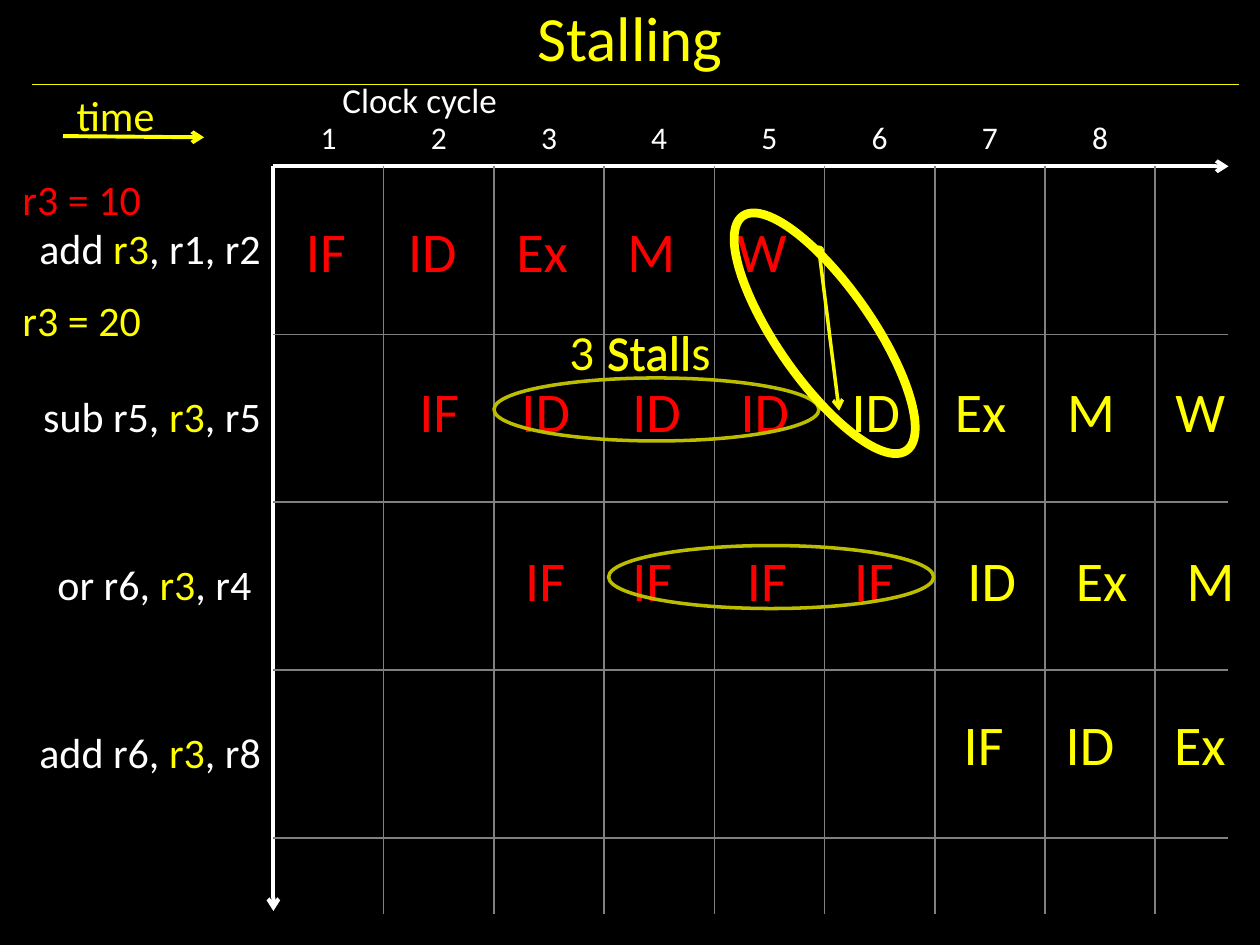
from pptx import Presentation
from pptx.dml.color import RGBColor
from pptx.enum.shapes import MSO_CONNECTOR, MSO_SHAPE
from pptx.enum.text import MSO_ANCHOR, MSO_AUTO_SIZE, PP_ALIGN
from pptx.oxml import parse_xml
from pptx.oxml.ns import nsdecls
from pptx.util import Inches, Pt

LINE, OVAL = MSO_CONNECTOR.STRAIGHT, MSO_SHAPE.OVAL
MID, GROW = MSO_ANCHOR.MIDDLE, MSO_AUTO_SIZE.SHAPE_TO_FIT_TEXT
LEFT, MIDDLE, RIGHT = PP_ALIGN.LEFT, PP_ALIGN.CENTER, PP_ALIGN.RIGHT
FONT = "Calibri"
WHITE, YELLOW, RED, GRAY = "FFFFFF", "FFFF00", "FF0000", "808080"
GOLD, OLIVE = "F9F900", "BDBD00"
PLAIN = "{2D5ABB26-0587-4C30-8999-92F81FD0307C}"

CODE = [("add ", ", r1, r2"), ("sub r5, ", ", r5"),
        ("or r6, ", ", r4 "), ("add r6, ", ", r8")]
CYCLES = 8
COLS = [2] + [7 / 8] * CYCLES + [0.58]
ROWS = [0.42] + [4 / 3] * 4 + [0.6]

WIDTHS = {"IF": 0.52, "ID": 0.59, "Ex": 0.62, "M": 0.59, "W": 0.6}
STAGES = [
    (1.67, RED, [("IF", 2.33), ("ID", 3.14), ("Ex", 4), ("M", 4.88), ("W", 5.75)]),
    (2.94, RED, [("IF", 3.23), ("ID", 4.04), ("ID", 4.92), ("ID", 5.78)]),
    (2.94, YELLOW, [("ID", 6.66), ("Ex", 7.48), ("M", 8.37), ("W", 9.23)]),
    (4.28, RED, [("IF", 4.07), ("IF", 4.92), ("IF", 5.83), ("IF", 6.68)]),
    (4.28, YELLOW, [("ID", 7.58), ("Ex", 8.44), ("M", 9.32)]),
    (5.58, YELLOW, [("IF", 7.55), ("ID", 8.36), ("Ex", 9.22)]),
]
LABELS = [
    ("Clock cycle", 2.62, 0.57, 1.63, 0.44, 20, WHITE),
    ("r3 = 10", 0.08, 1.33, 1.15, 0.5, 24, RED),
    ("r3 = 20", 0.08, 2.29, 1.15, 0.5, 24, YELLOW),
    ("time", 0.51, 0.66, 0.83, 0.5, 24, YELLOW),
]
STALLS = [
    ("Stalls", 4.72, 2.5, 1.03, 0.57, 28, YELLOW),
    ("3", 4.42, 2.5, 0.4, 0.57, 28, YELLOW),
    ("Stall", 4.72, 2.51, 0.88, 0.57, 28, YELLOW),
]
AXES = [
    (0.25, 0.67, 9.83, 0.67, GOLD, 0.75, None, None),
    (2.17, 1.32, 9.75, 1.32, WHITE, 2.25, None, "arrow"),
    (2.17, 1.32, 2.17, 7.23, WHITE, 2.25, None, "arrow"),
]
TIME = (0.5, 1.08, 1.62, 1.09, YELLOW, 2.25, None, "arrow")
PASS = (6.5, 1.99, 6.66, 3.26, GOLD, 2, "oval", "arrow")
RINGS = [
    (3.92, 3, 2.58, 0.5, 0, OLIVE, 2),
    (4.83, 4.33, 2.58, 0.5, 0, OLIVE, 2),
    (6.17, 1.51, 0.75, 2.27, 325.1, YELLOW, 5),
]


def color(text):
    return RGBColor.from_string(text)


def style(font, size, tint):
    font.name, font.size = FONT, Pt(size)
    font.color.rgb = color(tint)


def label(text, x, y, w, h, size, tint):
    box = slide.shapes.add_textbox(*map(Inches, (x, y, w, h)))
    frame = box.text_frame
    frame.word_wrap, frame.auto_size = False, GROW
    frame.text = text
    style(frame.paragraphs[0].font, size, tint)
    return frame


def line(x, y, x2, y2, tint, width, head, tail):
    link = slide.shapes.add_connector(LINE, *map(Inches, (x, y, x2, y2)))
    link.line.color.rgb, link.line.width = color(tint), Pt(width)
    for tag, kind in (("headEnd", head), ("tailEnd", tail)):
        if kind:
            link.line._ln.append(parse_xml(f'<a:{tag} {nsdecls("a")} type="{kind}"/>'))
    link._element.spPr.append(parse_xml(f'<a:effectLst {nsdecls("a")}/>'))


def ring(x, y, w, h, turn, tint, width):
    oval = slide.shapes.add_shape(OVAL, *map(Inches, (x, y, w, h)))
    oval.shadow.inherit = False
    oval.rotation = turn
    oval.fill.background()
    oval.line.color.rgb, oval.line.width = color(tint), Pt(width)


def border(cell, sides):
    for side in sides:
        cell._tc.get_or_add_tcPr().append(parse_xml(
            f'<a:ln{side} {nsdecls("a")} w="12700"><a:solidFill>'
            f'<a:srgbClr val="{GRAY}"/></a:solidFill></a:ln{side}>'))


def grid():
    table = slide.shapes.add_table(
        len(ROWS), len(COLS), *map(Inches, (0.17, 0.9, sum(COLS), sum(ROWS)))).table
    table.first_row = table.horz_banding = False
    table._tbl.tblPr.find("{*}tableStyleId").text = PLAIN
    for col, width in zip(table.columns, COLS):
        col.width = Inches(width)
    for row, height in zip(table.rows, ROWS):
        row.height = Inches(height)
    for r in range(len(ROWS)):
        for c in range(len(COLS)):
            cell = table.cell(r, c)
            if r and c:
                inner = {"L": c > 1, "R": c < len(COLS) - 1,
                         "T": r > 1, "B": r < len(ROWS) - 1}
                border(cell, [side for side in inner if inner[side]])
            cell.fill.background()
    for n in range(1, CYCLES + 1):
        cell = table.cell(0, n)
        cell.text = str(n)
        para = cell.text_frame.paragraphs[0]
        para.alignment = MIDDLE
        style(para.font, 18, WHITE)
    for r, (start, end) in enumerate(CODE, 1):
        cell = table.cell(r, 0)
        cell.vertical_anchor = MID
        para = cell.text_frame.paragraphs[0]
        para.alignment = RIGHT
        for text, tint in ((start, WHITE), ("r3", YELLOW), (end, WHITE)):
            run = para.add_run()
            run.text = text
            style(run.font, 24, tint)


deck = Presentation()
deck.slide_width, deck.slide_height = Inches(10), Inches(7.5)
slide = deck.slides.add_slide(deck.slide_layouts[6])
slide.background.fill.solid()
slide.background.fill.fore_color.rgb = color("000000")

for axis in AXES:
    line(*axis)
title = label("Stalling", 0.25, 0, 9.5, 0.58, 36, YELLOW)
title.word_wrap, title.auto_size = True, MSO_AUTO_SIZE.NONE
title.vertical_anchor = MID
title.paragraphs[0].alignment = MIDDLE
grid()
for item in LABELS:
    label(*item)
line(*TIME)
for y, tint, steps in STAGES:
    for text, x in steps:
        label(text, x, y, WIDTHS[text], 0.64, 32, tint)
for item in STALLS:
    label(*item)
line(*PASS)
for item in RINGS:
    ring(*item)
deck.save("out.pptx")
